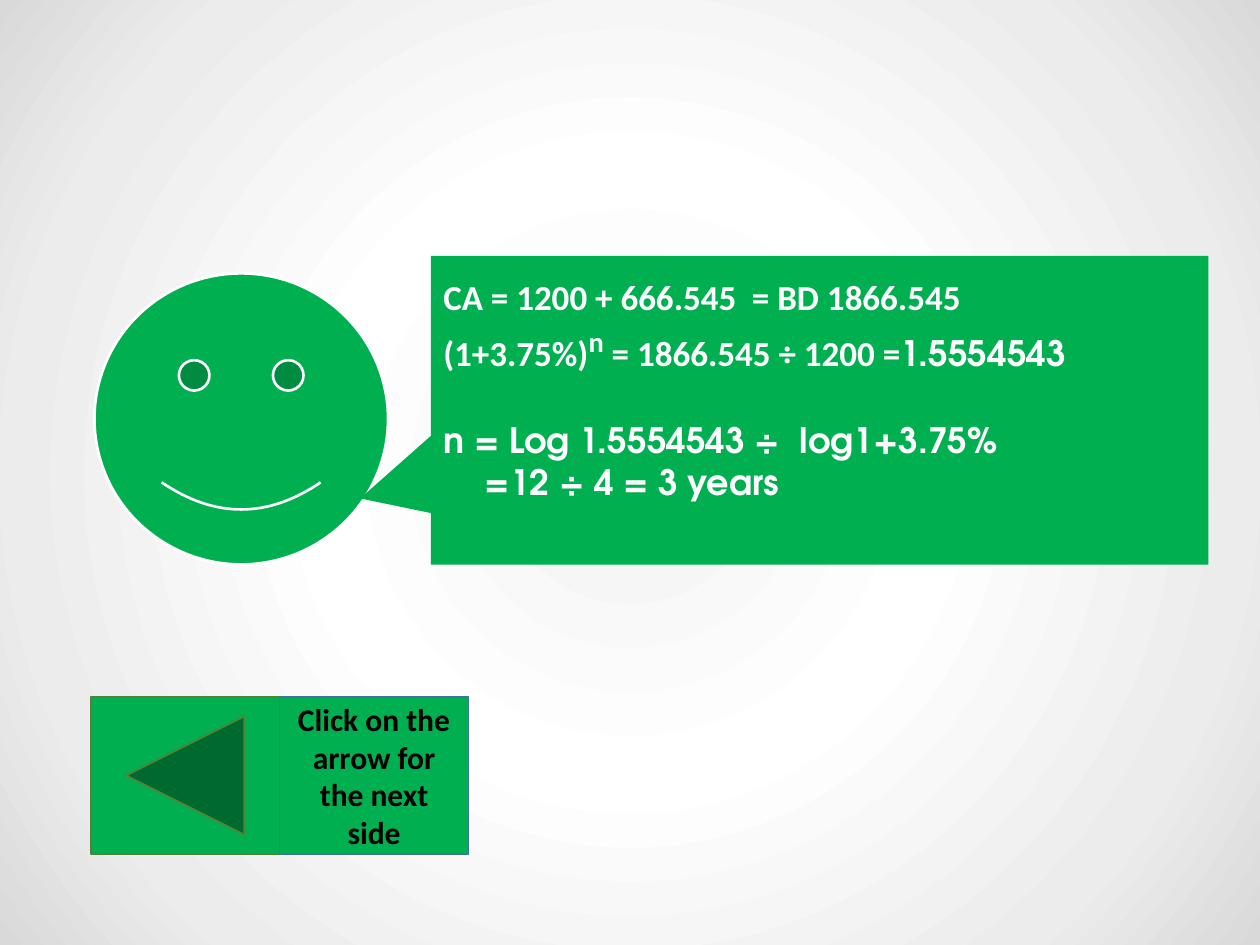
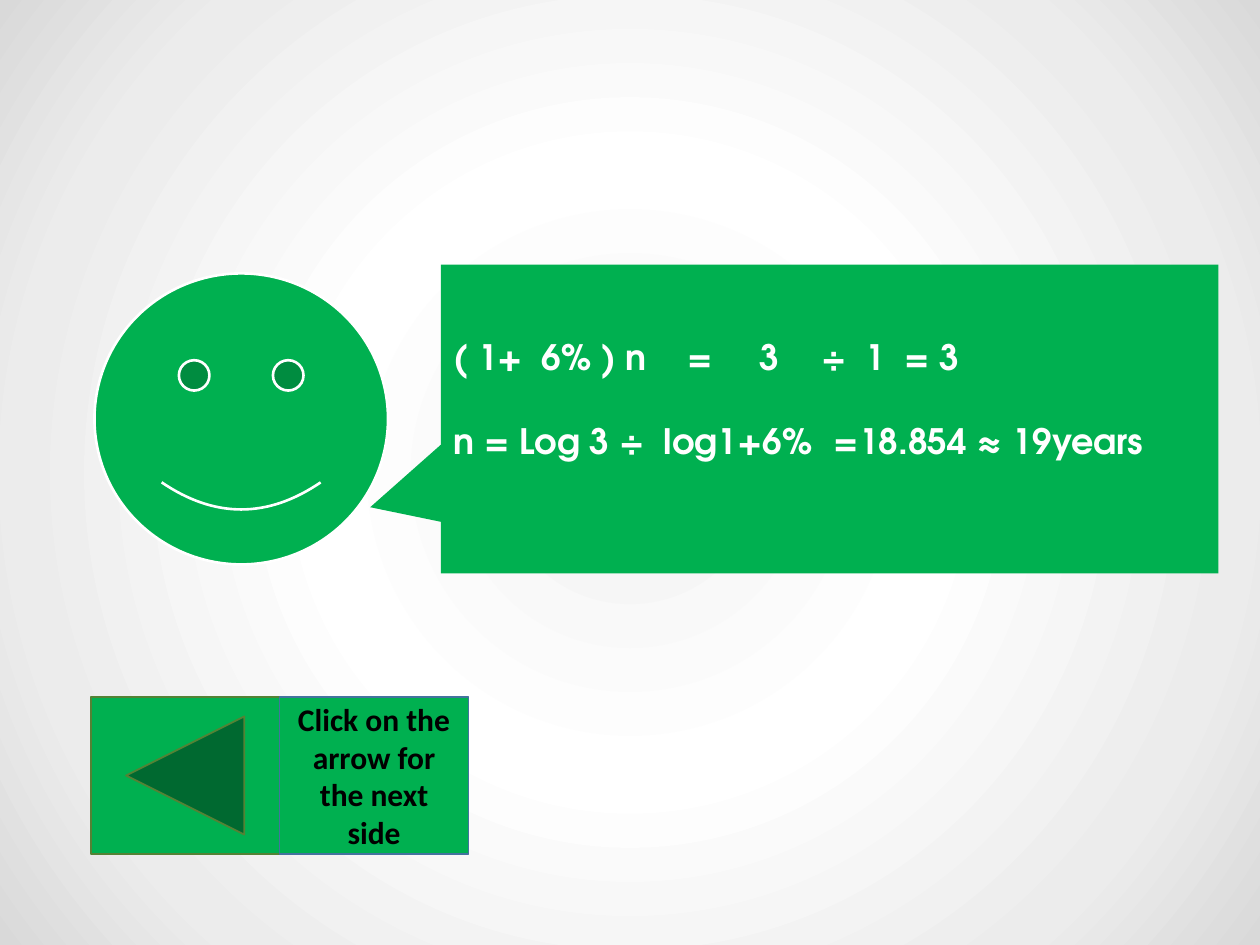
from dataclasses import dataclass
from typing import NamedTuple

from lxml import etree
from pptx import Presentation
from pptx.dml.color import RGBColor
from pptx.enum.shapes import MSO_SHAPE as Shp
from pptx.enum.text import MSO_ANCHOR as Anchor, PP_ALIGN as Align
from pptx.oxml.ns import qn
from pptx.util import Inches, Pt

WIDTH, HEIGHT = Inches(10), Inches(7.5)
COL, ROW = WIDTH / 100, HEIGHT / 100
COLORS = {
    "green": "00B050", "white": "FFFFFF", "black": "000000",
    "olive": "548235", "blue": "43739E",
}
BACKGROUND = {0: "F2F2F2", 39: "FFFFFF", 78: "ECECEC", 100: "D9D9D9"}
BODY, MATH = "Calibri", "TeX Gyre Adventor"
BLANK_LINE = 24


class Box(NamedTuple):
    left: float
    top: float
    width: float
    height: float


class Span(NamedTuple):
    text: str
    font: str = MATH
    size: float = 20
    raised: bool = False


@dataclass(frozen=True)
class Line:
    spans: tuple[Span, ...]
    tabs: tuple[float, ...] = ()
    indent: float = 0
    before: float = 0
    align: Align = Align.LEFT
    color: str = "white"


@dataclass(frozen=True)
class Figure:
    kind: Shp
    box: Box
    line: str | None = None
    weight: float = 1
    adjust: tuple[float, ...] = ()
    flip: bool = False
    lines: tuple[Line, ...] = ()
    bottom: float = 0.05


BUTTON = Box(7.2, 73.73, 15, 16.67)
LABEL = BUTTON._replace(left=BUTTON.left + BUTTON.width)
SMILEY = Figure(Shp.SMILEY_FACE, Box(7.5, 28.93, 23.3, 30.8),
                "white", 1.5, (0.047,))
NAVIGATION = (
    Figure(Shp.ACTION_BUTTON_BACK_OR_PREVIOUS, BUTTON, "olive"),
    Figure(Shp.PENTAGON, LABEL, "blue", adjust=(0,), flip=True, lines=(
        Line((Span("Click on the arrow for the next side", BODY, 18),),
             align=Align.CENTER, color="black"),
    )),
)


def callout(left: float, top: float, *lines: Line) -> Figure:
    return Figure(Shp.RECTANGULAR_CALLOUT, Box(left, top, 61.7, 32.67),
                  adjust=(-0.591, 0.286), lines=lines, bottom=0.38)


CALLOUTS = (
    callout(
        34.2, 27.07,
        Line((Span("CA = 1200 + 666.545\t= BD 1866.545", BODY),), (2.45,)),
        Line((Span("(1+3.75%)", BODY), Span("n", BODY, 28, True),
              Span(" = 1866.545 ÷ 1200 =", BODY), Span("1.5554543"))),
        Line((Span("n = Log 1.5554543 ÷\tlog1+3.75%"),), (2.83,),
             before=BLANK_LINE),
        Line((Span("=12 ÷ 4 = 3 years"),), indent=0.33),
    ),
    callout(
        35, 28,
        Line((Span("( 1+\t6% ) n\t=\t3\t÷\t1\t= 3"),),
             (0.7, 1.86, 2.43, 2.92, 3.27, 3.58)),
        Line((Span("n = Log 3 ÷\tlog1+6%\t=18.854 ≈ 19years"),),
             (1.67, 3.02), before=BLANK_LINE),
    ),
)


def rgb(name: str) -> RGBColor:
    return RGBColor.from_string(COLORS[name])


def paint_background(master) -> None:
    master.background.fill.gradient()
    grad = master.element.find(".//" + qn("a:gradFill"))
    for child in list(grad):
        grad.remove(child)
    stops = etree.SubElement(grad, qn("a:gsLst"))
    for share, color in BACKGROUND.items():
        stop = etree.SubElement(stops, qn("a:gs"), pos=str(share * 1000))
        etree.SubElement(stop, qn("a:srgbClr"), val=color)
    circle = etree.SubElement(grad, qn("a:path"), path="circle")
    etree.SubElement(circle, qn("a:fillToRect"),
                     dict.fromkeys("ltrb", "50000"))


def write_line(p, line: Line) -> None:
    p.alignment = line.align
    p.space_before = Pt(line.before)
    pPr = p._p.get_or_add_pPr()
    pPr.set("marL", str(Inches(line.indent)))
    if line.tabs:
        tab_list = etree.SubElement(pPr, qn("a:tabLst"))
        for stop in line.tabs:
            etree.SubElement(tab_list, qn("a:tab"),
                             pos=str(Inches(stop)), algn="l")
    for span in line.spans:
        r = p.add_run()
        r.text = span.text
        r.font.name, r.font.size, r.font.bold = span.font, Pt(span.size), True
        r.font.color.rgb = rgb(line.color)
        if span.raised:
            r.font._element.set("baseline", "30000")


def draw(slide, fig: Figure) -> None:
    box = fig.box
    sp = slide.shapes.add_shape(
        fig.kind, round(box.left * COL), round(box.top * ROW),
        round(box.width * COL), round(box.height * ROW))
    sp.shadow.inherit = False
    sp.fill.solid()
    sp.fill.fore_color.rgb = rgb("green")
    if fig.line:
        sp.line.color.rgb = rgb(fig.line)
        sp.line.width = Pt(fig.weight)
    else:
        sp.line.fill.background()
    for i, value in enumerate(fig.adjust):
        sp.adjustments[i] = value
    if fig.flip:
        sp._element.spPr.find(qn("a:xfrm")).set("flipH", "1")
    tf = sp.text_frame
    tf.word_wrap = True
    tf.vertical_anchor = Anchor.MIDDLE
    tf.margin_bottom = Inches(fig.bottom)
    for i, line in enumerate(fig.lines):
        write_line(tf.add_paragraph() if i else tf.paragraphs[0], line)


def main() -> None:
    prs = Presentation()
    prs.slide_width, prs.slide_height = WIDTH, HEIGHT
    paint_background(prs.slide_master)
    for speech in CALLOUTS:
        slide = prs.slides.add_slide(prs.slide_layouts[6])
        for fig in (SMILEY, speech, *NAVIGATION):
            draw(slide, fig)
    prs.save("out.pptx")


if __name__ == "__main__":
    main()
